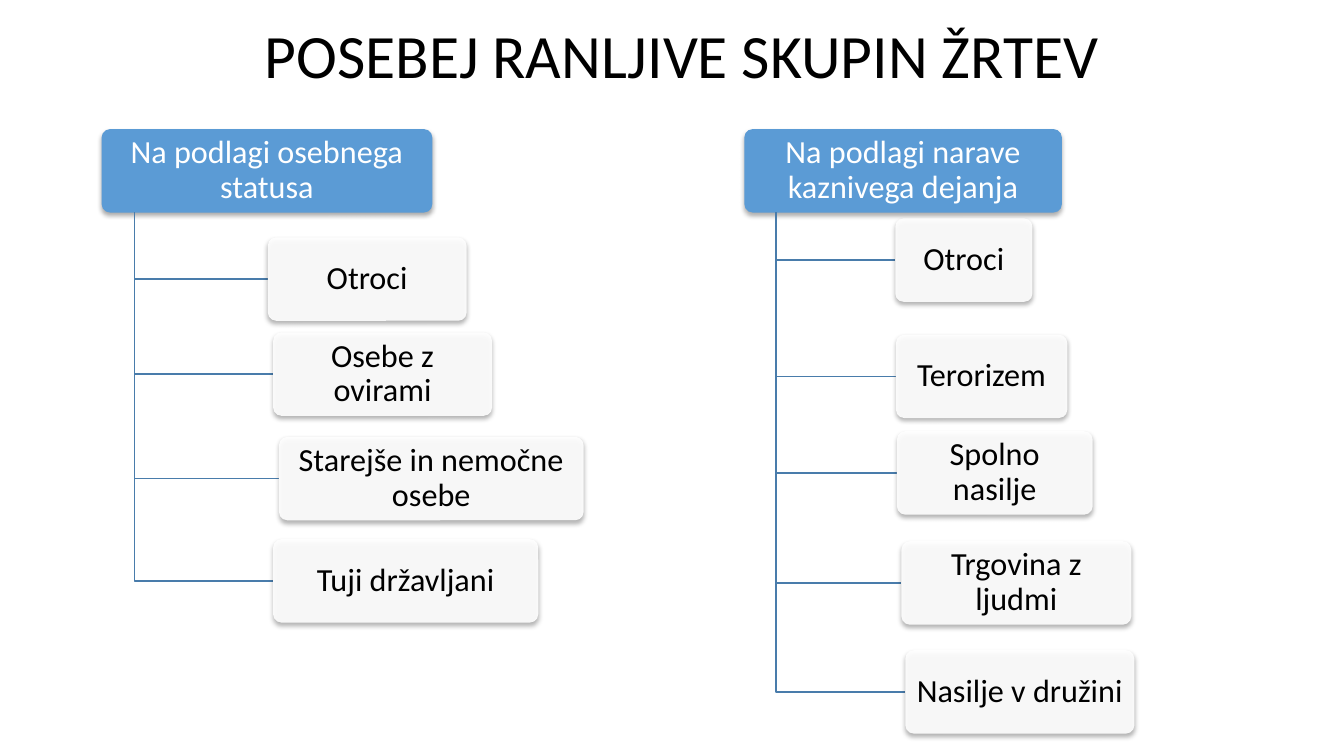
import pptx
import pptx.dml.color
import pptx.enum.shapes
import pptx.enum.text
import pptx.oxml.ns
import pptx.util

Pt = pptx.util.Pt
qn = pptx.oxml.ns.qn


def rgb(code):
    return pptx.dml.color.RGBColor.from_string(code)


class Deck:
    """Hold the diagram's style and the slide being drawn."""

    font, text_size, title_size = "Calibri", 23, 44
    blue, white, black, wire = "5B9BD5", "FFFFFF", "000000", "497CAB"
    box_height, root_top = 59.6, 92.2

    def __init__(self, prs):
        self.s = prs.slides.add_slide(prs.slide_layouts[5])

    def label(self, tf, text, size, color):
        tf.word_wrap = True
        tf.auto_size = pptx.enum.text.MSO_AUTO_SIZE.NONE
        tf.vertical_anchor = pptx.enum.text.MSO_ANCHOR.MIDDLE
        p = tf.paragraphs[0]
        p.alignment = pptx.enum.text.PP_ALIGN.CENTER
        p.line_spacing = 0.9
        r = p.add_run()
        r.text = text
        r.font.name = self.font
        r.font.size = Pt(size)
        r.font.color.rgb = rgb(color)

    def title(self, text, x, y, w, h):
        sp = self.s.shapes.title
        sp.left, sp.top, sp.width, sp.height = Pt(x), Pt(y), Pt(w), Pt(h)
        self.label(sp.text_frame, text, self.title_size, self.black)

    def alpha(self, color, percent):
        color.append(color.makeelement(qn("a:alpha"), {"val": str(percent * 1000)}))

    def shadow(self, sp):
        sp.shadow.inherit = False
        effects = sp._element.spPr.find(qn("a:effectLst"))
        outer = effects.makeelement(qn("a:outerShdw"), {
            "blurRad": str(Pt(3.5)), "dist": str(Pt(2.2)),
            "dir": "5400000", "rotWithShape": "0"})
        color = outer.makeelement(qn("a:srgbClr"), {"val": self.black})
        self.alpha(color, 32)
        outer.append(color)
        effects.append(outer)

    def box(self, text, x, y, w, fill, color, opacity=100):
        sp = self.s.shapes.add_shape(
            pptx.enum.shapes.MSO_SHAPE.ROUNDED_RECTANGLE,
            Pt(x), Pt(y), Pt(w), Pt(self.box_height))
        sp.adjustments[0] = 0.1
        sp.fill.solid()
        sp.fill.fore_color.rgb = rgb(fill)
        if opacity < 100:
            solid = sp._element.spPr.find(qn("a:solidFill"))
            self.alpha(solid.find(qn("a:srgbClr")), opacity)
        sp.line.fill.background()
        self.shadow(sp)
        tf = sp.text_frame
        tf.margin_left = tf.margin_right = Pt(5.4)
        tf.margin_top = tf.margin_bottom = Pt(4)
        self.label(tf, text, self.text_size, color)

    def elbow(self, x, top, right, bottom):
        builder = self.s.shapes.build_freeform(Pt(x), Pt(top))
        builder.add_line_segments(
            [(Pt(x), Pt(bottom)), (Pt(right), Pt(bottom))], close=False)
        sp = builder.convert_to_shape()
        sp.fill.background()
        sp.line.color.rgb = rgb(self.wire)
        sp.line.width = Pt(1)
        sp.shadow.inherit = False

    def tree(self, text, x, w, children):
        self.box(text, x, self.root_top, w, self.blue, self.white)
        trunk, start = x + w / 10, self.root_top + self.box_height
        for name, left, top, width in children:
            self.elbow(trunk, start, left, top + self.box_height / 2)
            self.box(name, left, top, width, self.white, self.black, 90)


def main():
    prs = pptx.Presentation()
    prs.slide_width, prs.slide_height = Pt(960), Pt(540)
    deck = Deck(prs)
    deck.title("POSEBEJ RANLJIVE SKUPIN ŽRTEV", 73.4, 5, 828, 74.2)
    deck.tree("Na podlagi osebnega statusa", 72.6, 236.2, [
        ("Otroci", 191.3, 169.5, 142),
        ("Osebe z ovirami", 195.1, 237.4, 156.4),
        ("Starejše in nemočne osebe", 199.3, 312, 217.6),
        ("Tuji državljani", 195.1, 385.1, 189.4),
    ])
    deck.tree("Na podlagi narave kaznivega dejanja", 531.7, 226.8, [
        ("Otroci", 639.5, 156, 98),
        ("Terorizem", 640, 239, 122.4),
        ("Spolno nasilje", 640.7, 308, 139.8),
        ("Trgovina z ljudmi", 643.9, 386.6, 164.2),
        ("Nasilje v družini", 646.7, 464.4, 163.6),
    ])
    prs.save("out.pptx")


if __name__ == "__main__":
    main()
